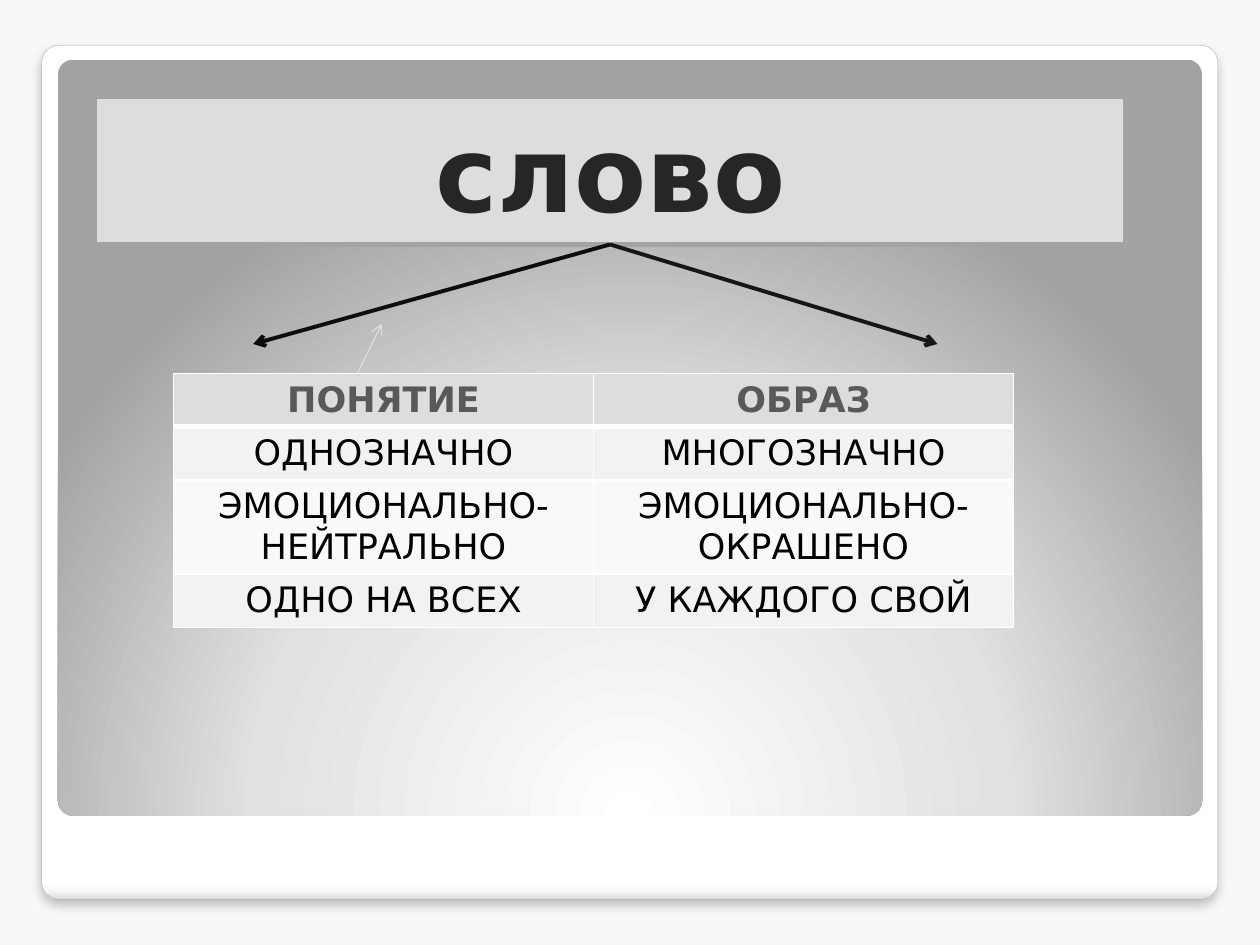
from dataclasses import dataclass

from lxml import etree
from pptx import Presentation
from pptx.dml.color import RGBColor
from pptx.enum import shapes, text
from pptx.oxml import ns
from pptx.util import Pt


@dataclass(frozen=True)
class Theme:
    font: str = "DejaVu Sans"
    title_size: int = 60
    table_size: int = 20
    backdrop: str = "F8F8F8"
    frame_line: str = "A4A4A4"
    title_fill: str = "DDDDDD"
    title_line: str = "A3A3A3"
    title_text: str = "262626"
    pointer: str = "DDDDDD"
    left_arrow: str = "0D0D0D"
    right_arrow: str = "161616"
    header_fill: str = "DDDDDD"
    header_text: str = "595959"
    body_text: str = "000000"
    odd_row: str = "F2F2F2"
    even_row: str = "F9F9F9"
    grid: str = "FFFFFF"


theme = Theme()
rgb = RGBColor.from_string


def add_xml(parent, markup, index=None):
    """Put a DrawingML element into parent, at the end unless an index is given."""
    head, rest = markup.split(">", 1) if not markup.endswith("/>") else (markup[:-2], None)
    tail = "/>" if rest is None else ">" + rest
    if head.endswith("/"):
        head, tail = head[:-1], "/>" + (rest or "")
    element = etree.fromstring(f'{head} {ns.nsdecls("a")}{tail}')
    parent.insert(len(parent) if index is None else index, element)


def add_text(frame, words, size, color, bold):
    """Write one centred run."""
    paragraph = frame.paragraphs[0]
    paragraph.alignment = text.PP_ALIGN.CENTER
    run = paragraph.add_run()
    run.text = words
    run.font.name = theme.font
    run.font.size = Pt(size)
    run.font.bold = bold
    run.font.color.rgb = rgb(color)


prs = Presentation()
prs.slide_width, prs.slide_height = Pt(720), Pt(540)
slide = prs.slides.add_slide(prs.slide_layouts[5])
slide.background.fill.solid()
slide.background.fill.fore_color.rgb = rgb(theme.backdrop)

# Frame and inner panel, both with gradients
panels = [
    ((23.9, 25.9, 672, 488),
     [(0, "FFFFFF"), (98, "FFFFFF"), (99, "F7F7F7"), (100, "DADADA")],
     '<a:lin ang="5400000" scaled="0"/>'),
    ((33.1, 34.1, 653.8, 432),
     [(0, "FFFFFF"), (55, "E1E1E1"), (100, "A2A2A2")],
     '<a:path path="circle"><a:fillToRect l="50000" t="175000" r="50000" b="-75000"/></a:path>'),
]
panel_shapes = []
for box, stops, direction in panels:
    panel = slide.shapes.add_shape(shapes.MSO_SHAPE.ROUNDED_RECTANGLE, *map(Pt, box))
    panel.adjustments[0] = 0.02
    panel.shadow.inherit = False
    panel.line.fill.background()
    marks = "".join(f'<a:gs pos="{pos * 1000}"><a:srgbClr val="{color}"/></a:gs>'
                    for pos, color in stops)
    add_xml(panel._element.spPr,
            f'<a:gradFill rotWithShape="1"><a:gsLst>{marks}</a:gsLst>{direction}</a:gradFill>', 2)
    panel_shapes.append(panel)

frame, inner = panel_shapes
frame.line.color.rgb = rgb(theme.frame_line)
frame.line.width = Pt(0.16)
add_xml(frame._element.spPr.find(ns.qn("a:effectLst")),
        f'<a:outerShdw blurRad="{Pt(6)}" dist="{Pt(4)}" dir="5400000" algn="t" rotWithShape="0">'
        '<a:srgbClr val="000000"><a:alpha val="25000"/></a:srgbClr></a:outerShdw>')

# Title, lifted above the panels
title = slide.shapes.title
inner._element.addnext(title._element)
title.left, title.top, title.width, title.height = map(Pt, (54, 54.7, 589.7, 85))
title.fill.solid()
title.fill.fore_color.rgb = rgb(theme.title_fill)
title.line.color.rgb = rgb(theme.title_line)
title.line.width = Pt(3.35)
title.text_frame.auto_size = text.MSO_AUTO_SIZE.NONE
title.text_frame.vertical_anchor = text.MSO_ANCHOR.MIDDLE
add_text(title.text_frame, "слово", theme.title_size, theme.title_text, True)

# Small pointer, then the arrows from the title to the two columns
fork = (348.6, 139.7)
arrows = [
    ((195.8, 230.4), (218.2, 185), theme.pointer, 0.75),
    (fork, (144.7, 196.6), theme.left_arrow, 2.25),
    (fork, (535.7, 196.6), theme.right_arrow, 2.25),
]
for start, end, color, width in arrows:
    arrow = slide.shapes.add_connector(shapes.MSO_CONNECTOR.STRAIGHT, *map(Pt, start + end))
    arrow.line.color.rgb = rgb(color)
    arrow.line.width = Pt(width)
    add_xml(arrow.line._get_or_add_ln(), '<a:tailEnd type="arrow"/>')
    add_xml(arrow._element.spPr, "<a:effectLst/>")

# Comparison table
comparison = [
    ("ПОНЯТИЕ", "ОБРАЗ"),
    ("ОДНОЗНАЧНО", "МНОГОЗНАЧНО"),
    ("ЭМОЦИОНАЛЬНО-НЕЙТРАЛЬНО", "ЭМОЦИОНАЛЬНО-ОКРАШЕНО"),
    ("ОДНО НА ВСЕХ", "У КАЖДОГО СВОЙ"),
]
table = slide.shapes.add_table(4, 2, *map(Pt, (99.2, 213.3, 480, 118))).table
for column in table.columns:
    column.width = Pt(240)
for row_no, words in enumerate(comparison):
    table.rows[row_no].height = Pt(29.5)
    header = row_no == 0
    row_fill = theme.header_fill if header else (theme.odd_row if row_no % 2 else theme.even_row)
    for col_no, word in enumerate(words):
        cell = table.cell(row_no, col_no)
        add_text(cell.text_frame, word, theme.table_size,
                 theme.header_text if header else theme.body_text, header)
        borders = {"L": 1, "R": 1, "T": 3 if row_no == 1 else 1, "B": 3 if header else 1}
        for side, width in borders.items():
            add_xml(cell._tc.get_or_add_tcPr(),
                    f'<a:ln{side} w="{Pt(width)}"><a:solidFill><a:srgbClr val="{theme.grid}"/>'
                    f'</a:solidFill></a:ln{side}>')
        cell.fill.solid()
        cell.fill.fore_color.rgb = rgb(row_fill)

prs.save("out.pptx")
